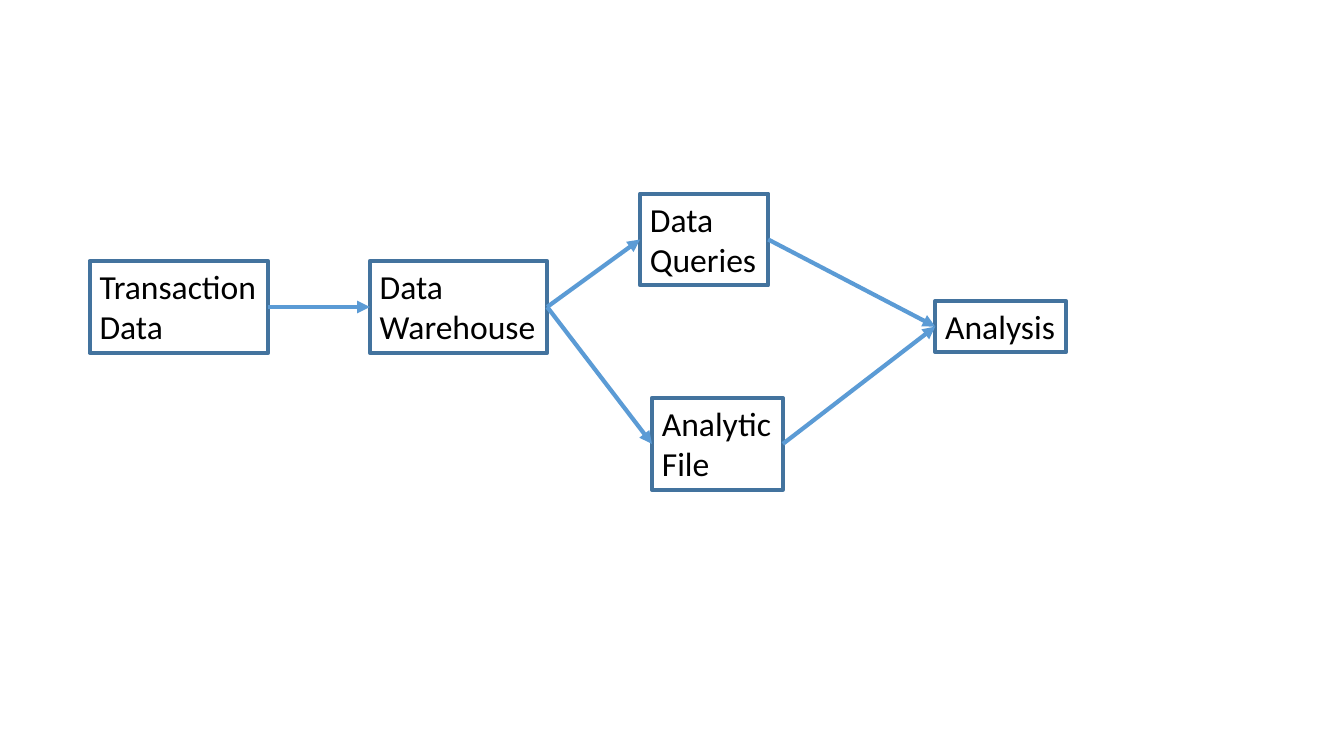
from lxml import etree
from pptx import Presentation
from pptx import util as u
from pptx.dml.color import RGBColor
from pptx.enum import shapes, text
from pptx.oxml.ns import qn

# Content: step -> (lines, left, top, width) in cm
STEPS = {
    "transactions": (["Transaction", "Data"], 2.26, 6.58, 4.5),
    "warehouse": (["Data", "Warehouse"], 9.32, 6.58, 4.47),
    "file": (["Analytic", "File"], 16.43, 10.03, 3.3),
    "queries": (["Data", "Queries"], 16.13, 4.88, 3.23),
    "analysis": (["Analysis"], 23.57, 7.59, 3.3),
}
FLOWS = [
    ("transactions", "warehouse"),
    ("warehouse", "queries"),
    ("warehouse", "file"),
    ("queries", "analysis"),
    ("file", "analysis"),
]
BORDER, ARROW, INK = "43739E", "5B9BD5", "000000"
PADDING, LINE_HEIGHT = 0.25, 1.03
LEFT_SIDE, RIGHT_SIDE = 1, 3


def color(value):
    return RGBColor.from_string(value)


def set_line(line, value, width=3):
    line.color.rgb = color(value)
    line.width = u.Pt(width)


def write(frame, lines, size=24, font="Calibri", ink=INK):
    frame.word_wrap = False
    frame.auto_size = text.MSO_AUTO_SIZE.SHAPE_TO_FIT_TEXT
    for number, line in enumerate(lines):
        paragraph = frame.add_paragraph() if number else frame.paragraphs[0]
        run = paragraph.add_run()
        run.text = line
        run.font.size = u.Pt(size)
        run.font.name = font
        run.font.color.rgb = color(ink)


def add_step(slide, lines, left, top, width):
    height = PADDING + LINE_HEIGHT * len(lines)
    step = slide.shapes.add_textbox(u.Cm(left), u.Cm(top), u.Cm(width), u.Cm(height))
    set_line(step.line, BORDER)
    write(step.text_frame, lines)
    return step


def add_flow(slide, source, target):
    flow = slide.shapes.add_connector(shapes.MSO_CONNECTOR.STRAIGHT, 0, 0, 0, 0)
    flow.begin_connect(source, RIGHT_SIDE)
    flow.end_connect(target, LEFT_SIDE)
    set_line(flow.line, ARROW)
    # Arrowhead at the target, no shadow
    properties = flow.line._get_or_add_ln()
    etree.SubElement(properties, qn("a:tailEnd"), type="triangle")
    etree.SubElement(properties.getparent(), qn("a:effectLst"))


def main():
    deck = Presentation()
    deck.slide_width, deck.slide_height = u.Cm(33.87), u.Cm(19.05)
    slide = deck.slides.add_slide(deck.slide_layouts[6])

    # Boxes first, then the arrows between them
    steps = {key: add_step(slide, *step) for key, step in STEPS.items()}
    for source, target in FLOWS:
        add_flow(slide, steps[source], steps[target])

    deck.save("out.pptx")


if __name__ == "__main__":
    main()
